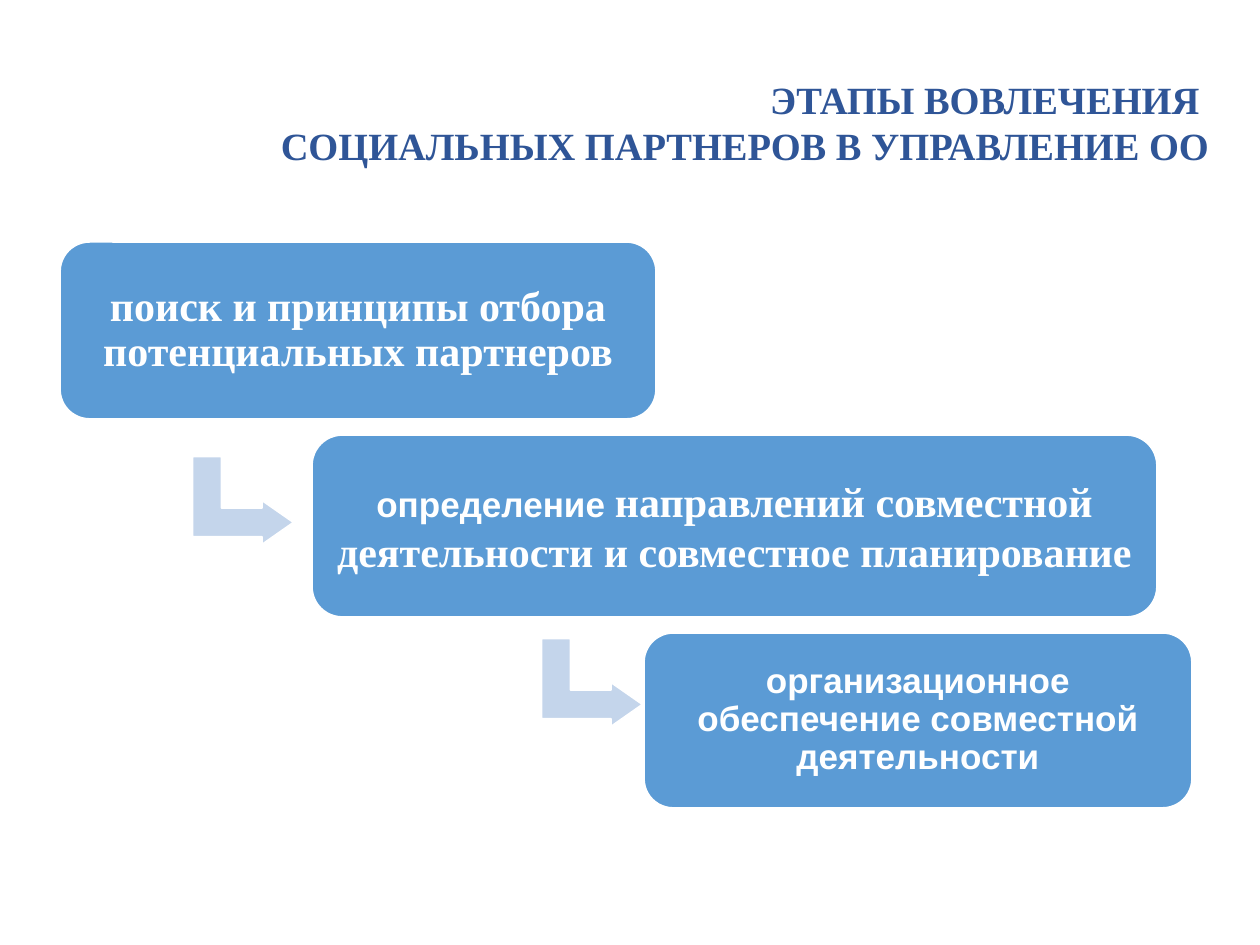
from pptx import Presentation
from pptx.dml.color import RGBColor
from pptx.enum.shapes import MSO_SHAPE
from pptx.enum.text import MSO_ANCHOR, PP_ALIGN
from pptx.util import Pt

SCALE = 914400 / 126
COLORS = {"title": "2F5597", "step": "5B9BD5", "arrow": "C4D5EB", "white": "FFFFFF"}
SERIF, SANS = "Times New Roman", "Arial"


def px(n):
    return round(n * SCALE)


def tint(name):
    return RGBColor.from_string(COLORS[name])


def add_run(para, text, size, font, color):
    run = para.add_run()
    run.text = text
    run.font.size = Pt(size)
    run.font.name = font
    run.font.bold = True
    run.font.color.rgb = tint(color)


def set_frame(frame, inset, anchor):
    frame.word_wrap = True
    frame.vertical_anchor = anchor
    frame.margin_left = frame.margin_right = px(inset)
    frame.margin_top = frame.margin_bottom = px(inset)


def add_title(slide, box, lines):
    title = slide.shapes.title
    title.left, title.top, title.width, title.height = map(px, box)
    frame = title.text_frame
    set_frame(frame, 12, MSO_ANCHOR.TOP)
    for i, line in enumerate(lines):
        para = frame.add_paragraph() if i else frame.paragraphs[0]
        para.alignment = PP_ALIGN.RIGHT
        para.line_spacing = 1.0
        para.space_before = Pt(0)
        add_run(para, line, 22, SERIF, "title")


def add_block(slide, kind, box, color, adjust):
    shape = slide.shapes.add_shape(kind, *map(px, box))
    shape.shadow.inherit = False
    shape.fill.solid()
    shape.fill.fore_color.rgb = tint(color)
    shape.line.color.rgb = tint("white")
    shape.line.width = Pt(1)
    for i, value in enumerate(adjust):
        shape.adjustments[i] = value
    return shape


def add_step(slide, box, inset, spacing, runs):
    step = add_block(slide, MSO_SHAPE.ROUNDED_RECTANGLE, box, "step", [0.167])
    set_frame(step.text_frame, inset, MSO_ANCHOR.MIDDLE)
    para = step.text_frame.paragraphs[0]
    para.alignment = PP_ALIGN.CENTER
    para.line_spacing = spacing
    for text, size, font in runs:
        add_run(para, text, size, font, "white")


def add_arrow(slide, left, top):
    arrow = add_block(slide, MSO_SHAPE.BENT_UP_ARROW, (left, top, 88, 101),
                      "arrow", [0.328, 0.25, 0.358])
    arrow.rotation = 90


def main():
    deck = Presentation()
    deck.slide_width, deck.slide_height = px(1260), px(945)
    slide = deck.slides.add_slide(deck.slide_layouts[5])
    add_title(slide, (189, 64, 1032, 69),
              ["ЭТАПЫ ВОВЛЕЧЕНИЯ ", "СОЦИАЛЬНЫХ ПАРТНЕРОВ В УПРАВЛЕНИЕ ОО"])
    steps = [
        ((60, 242, 596, 177), 12, 0.9,
         [("поиск и принципы отбора потенциальных партнеров", 24, SERIF)]),
        ((312, 435, 845, 182), 10, 1.0,
         [("определение ", 20, SANS),
          ("направлений совместной деятельности и совместное планирование", 24, SERIF)]),
        ((644, 633, 548, 175), 10, 0.9,
         [("организационное обеспечение совместной деятельности", 20, SANS)]),
    ]
    for left, top in [(199, 450), (548, 632)]:
        add_arrow(slide, left, top)
    for step in steps:
        add_step(slide, *step)
    deck.save("out.pptx")


if __name__ == "__main__":
    main()
